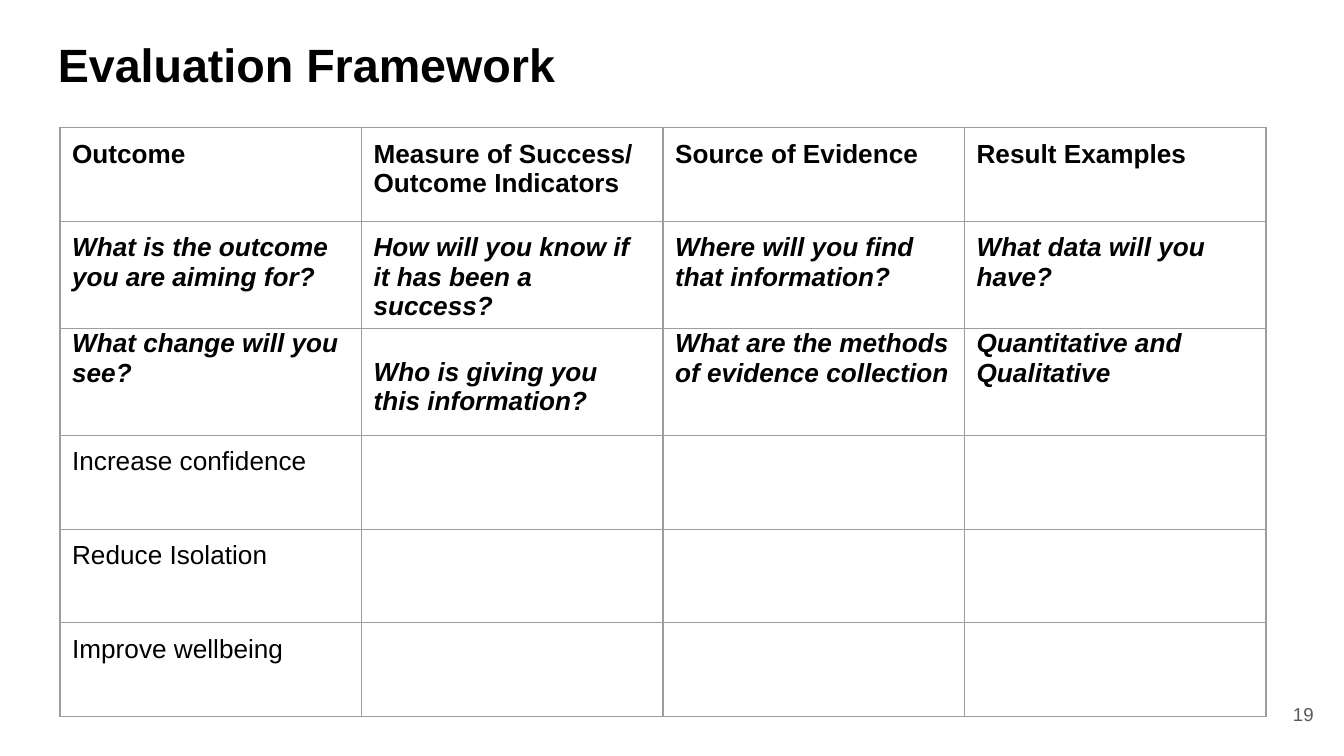
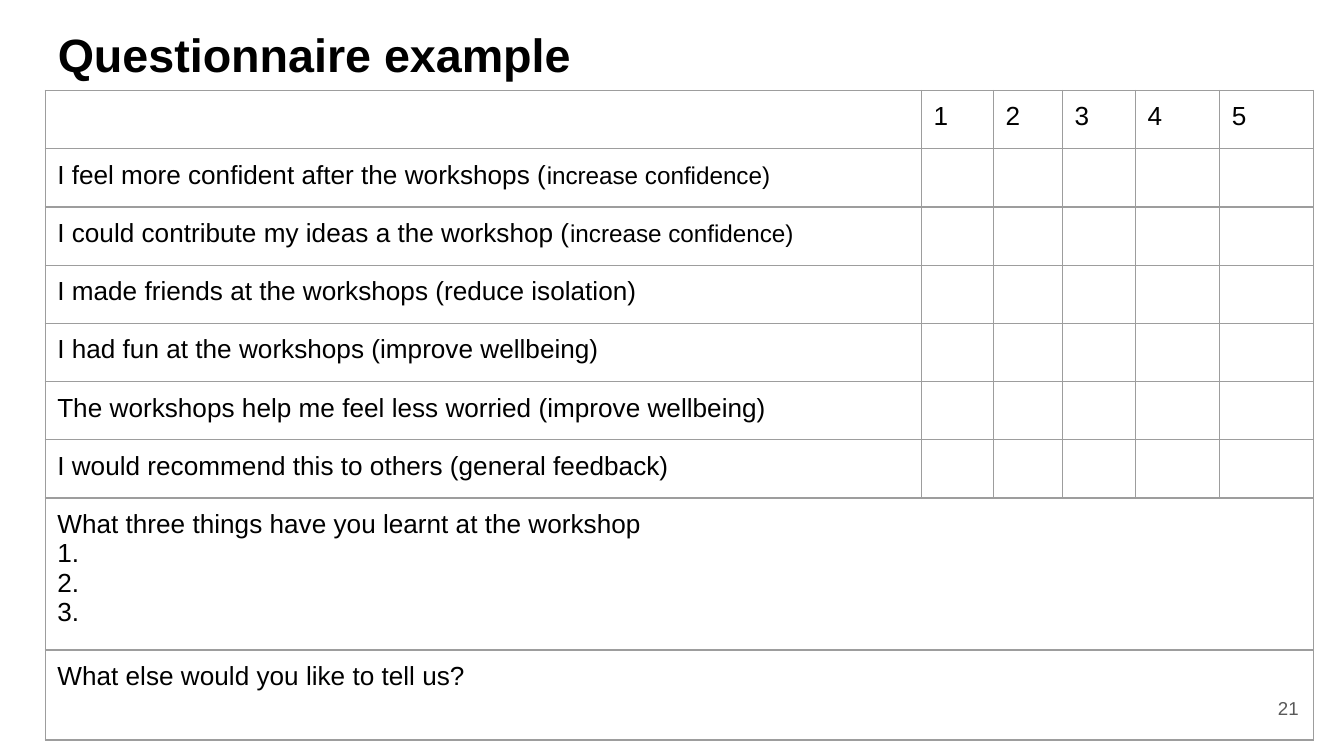
from dataclasses import dataclass
from typing import Optional

from lxml.etree import SubElement
from pptx import Presentation
from pptx.dml.color import RGBColor
from pptx.enum.text import MSO_ANCHOR as Anchor, PP_ALIGN as Align
from pptx.oxml.ns import qn
from pptx.util import Emu, Pt

EMU_PER_PX = 914400 // 300
SLIDE_WIDTH, SLIDE_HEIGHT = 3000, 1687
FONT = "Arial"
COLORS = {"background": "FFFFFF", "text": "000000", "page": "595959", "border": "9D9D9D"}
TITLE_SIZE, BODY_SIZE, NOTE_SIZE, PAGE_SIZE = 25, 14, 13, 10
CELL_LEFT, CELL_TOP, CELL_RIGHT = 27, 26, 50


@dataclass(frozen=True)
class Box:
    left: int
    top: int
    width: int
    height: int


@dataclass(frozen=True)
class Run:
    text: str
    size: float = BODY_SIZE
    color: str = "text"
    bold: bool = False
    italic: bool = False


@dataclass(frozen=True)
class Line:
    runs: tuple[Run, ...]
    align: Align = Align.LEFT
    before: float = 0
    spacing: Optional[float] = None


@dataclass(frozen=True)
class Cell:
    lines: tuple[Line, ...] = ()
    top: int = CELL_TOP
    right: int = CELL_RIGHT
    span: int = 1


@dataclass(frozen=True)
class Grid:
    left: int
    top: int
    columns: list[int]
    rows: list[int]
    cells: list[list[Cell]]


def px(length: int) -> Emu:
    return Emu(length * EMU_PER_PX)


def rgb(name: str) -> RGBColor:
    return RGBColor.from_string(COLORS[name])


def write_run(paragraph, text: str, *, size: float = BODY_SIZE, color: str = "text",
              bold: bool = False, italic: bool = False) -> None:
    run = paragraph.add_run()
    run.text = text
    font = run.font
    font.name, font.size, font.bold, font.italic = FONT, Pt(size), bold, italic
    font.color.rgb = rgb(color)


def write_lines(frame, lines: tuple[Line, ...]) -> None:
    for index, line in enumerate(lines):
        paragraph = frame.add_paragraph() if index else frame.paragraphs[0]
        paragraph.alignment = line.align
        paragraph.space_before = Pt(line.before)
        if line.spacing:
            paragraph.line_spacing = Pt(line.spacing)
        for run in line.runs:
            write_run(paragraph, run.text, size=run.size, color=run.color,
                      bold=run.bold, italic=run.italic)


def add_label(slide, box: Box, run: Run, *, left: int, top: int) -> None:
    """Add a one-line text box with the given left and top insets."""
    shape = slide.shapes.add_textbox(px(box.left), px(box.top), px(box.width), px(box.height))
    frame = shape.text_frame
    frame.word_wrap = True
    frame.margin_left, frame.margin_top = px(left), px(top)
    frame.margin_right = frame.margin_bottom = 0
    write_lines(frame, (Line((run,)),))


def add_title(slide, text: str, top: int) -> None:
    add_label(slide, Box(126, top, 1164, 135), Run(text, TITLE_SIZE, bold=True), left=3, top=15)


def draw_borders(cell) -> None:
    properties = cell._tc.get_or_add_tcPr()
    for side in ("lnL", "lnR", "lnT", "lnB"):
        line = SubElement(properties, qn(f"a:{side}"), w=str(Pt(0.75)))
        fill = SubElement(line, qn("a:solidFill"))
        SubElement(fill, qn("a:srgbClr"), val=COLORS["border"])


def add_grid(slide, grid: Grid) -> None:
    frame = slide.shapes.add_table(
        len(grid.rows), len(grid.columns), px(grid.left), px(grid.top),
        px(sum(grid.columns)), px(sum(grid.rows)))
    table = frame.table
    table.first_row = table.horz_banding = False
    for column, width in zip(table.columns, grid.columns):
        column.width = px(width)
    for row, height in zip(table.rows, grid.rows):
        row.height = px(height)
    for cell in table.iter_cells():
        draw_borders(cell)
        cell.fill.background()
        cell.margin_left, cell.margin_top = px(CELL_LEFT), px(CELL_TOP)
        cell.margin_right = cell.margin_bottom = 0
    for row_index, row_cells in enumerate(grid.cells):
        for column_index, content in enumerate(row_cells):
            cell = table.cell(row_index, column_index)
            if content.span > 1:
                cell.merge(table.cell(row_index, column_index + content.span - 1))
            cell.vertical_anchor = Anchor.TOP
            cell.margin_top, cell.margin_right = px(content.top), px(content.right)
            write_lines(cell.text_frame, content.lines)


def text_cell(text: str, *, note: str = "", bold: bool = False, italic: bool = False,
              top: int = CELL_TOP, right: int = CELL_RIGHT) -> Cell:
    """Make a one-paragraph cell; the note follows in a smaller size."""
    runs = [Run(text, bold=bold, italic=italic)]
    if note:
        runs.append(Run(note, NOTE_SIZE))
    return Cell((Line(tuple(runs)),), top=top, right=right)


def stacked_cell(*texts: str) -> Cell:
    """Make a bold italic cell that starts at the top border."""
    lines = tuple(Line((Run(text, bold=True, italic=True),), spacing=None if index else 16.1)
                  for index, text in enumerate(texts))
    return Cell(lines, top=0, right=0)


def build_framework(slide) -> None:
    headings = ["Outcome", "Measure of Success/ Outcome Indicators",
                "Source of Evidence", "Result Examples"]
    questions = ["What is the outcome you are aiming for?",
                 "How will you know if it has been a success?",
                 "Where will you find that information?",
                 "What data will you have?"]
    follow_ups = [
        stacked_cell("What change will you", "see?"),
        text_cell("Who is giving you this information?", bold=True, italic=True, top=65),
        stacked_cell("What are the methods", "of evidence collection"),
        stacked_cell("Quantitative and", "Qualitative"),
    ]
    outcomes = ["Increase confidence", "Reduce Isolation", "Improve wellbeing"]
    cells = [[text_cell(heading, bold=True) for heading in headings],
             [text_cell(question, bold=True, italic=True) for question in questions],
             follow_ups,
             *[[text_cell(outcome)] for outcome in outcomes]]
    add_label(slide, Box(2874, 1569, 75, 54), Run("19", PAGE_SIZE, "page"), left=12, top=0)
    add_grid(slide, Grid(134, 285, [673] * 4, [209, 239, 239] + [209] * 3, cells))
    add_title(slide, "Evaluation Framework", 66)


def build_questionnaire(slide) -> None:
    columns = [1956, 161, 154, 163, 188, 209]
    statements = [
        ("I feel more confident after the workshops (", "increase confidence)"),
        ("I could contribute my ideas a the workshop (", "increase confidence)"),
        ("I made friends at the workshops (reduce isolation)", ""),
        ("I had fun at the workshops (improve wellbeing)", ""),
        ("The workshops help me feel less worried (improve wellbeing)", ""),
        ("I would recommend this to others (general feedback)", ""),
    ]
    learnt = ["What three things have you learnt at the workshop", "1.", "2.", "3."]
    closing = (Line((Run("What else would you like to tell us?"),)),
               Line((Run("21", PAGE_SIZE, "page"),), Align.RIGHT, before=4.2))
    scores = [text_cell(str(score), right=0) for score in range(1, len(columns))]
    cells = [[Cell(), *scores],
             *[[text_cell(text, note=note)] for text, note in statements],
             [Cell(tuple(Line((Run(text),)) for text in learnt), span=len(columns))],
             [Cell(closing, right=33, span=len(columns))]]
    add_title(slide, "Questionnaire example", 42)
    add_grid(slide, Grid(101, 202, columns, [130] * 7 + [339, 201], cells))


def main() -> None:
    presentation = Presentation()
    presentation.slide_width, presentation.slide_height = px(SLIDE_WIDTH), px(SLIDE_HEIGHT)
    for build in (build_framework, build_questionnaire):
        slide = presentation.slides.add_slide(presentation.slide_layouts[6])
        slide.background.fill.solid()
        slide.background.fill.fore_color.rgb = rgb("background")
        build(slide)
    presentation.save("out.pptx")


if __name__ == "__main__":
    main()
